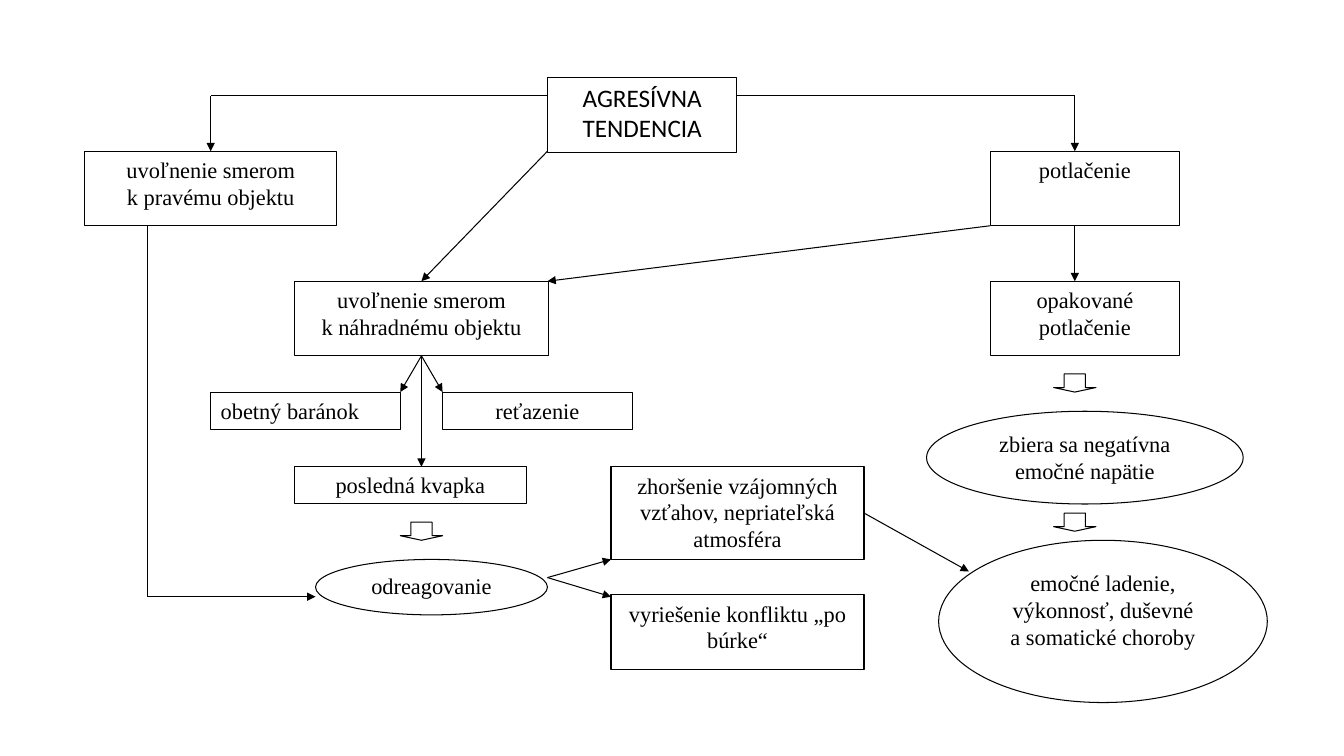
from dataclasses import dataclass
from typing import Optional

import pptx
import pptx.dml.color
import pptx.enum.shapes
import pptx.enum.text
import pptx.oxml
import pptx.oxml.ns
import pptx.util

Inches = pptx.util.Inches
Pt = pptx.util.Pt
Shape = pptx.enum.shapes.MSO_SHAPE
Align = pptx.enum.text.PP_ALIGN

BLACK = pptx.dml.color.RGBColor(0, 0, 0)
WHITE = pptx.dml.color.RGBColor(255, 255, 255)
LINE_WIDTH = Pt(0.75)
TOP, LEFT, BOTTOM, RIGHT = range(4)
HARD_SPACE = chr(160)  # keeps a one-letter word with the next word


@dataclass(frozen=True)
class Node:
    key: str
    text: str
    left: float
    top: float
    width: float
    height: float
    kind: int = Shape.RECTANGLE
    font: str = "Times New Roman"
    size: float = 16
    align: int = Align.CENTER


@dataclass(frozen=True)
class Link:
    """A line; begin and end may give a node's key and the side to join."""
    start: tuple[float, float]
    finish: tuple[float, float]
    arrow: bool = True
    begin: Optional[tuple[str, int]] = None
    end: Optional[tuple[str, int]] = None


NODES = [
    Node("tendency", "AGRESÍVNA TENDENCIA", 5.43, 0.77, 1.88, 0.74, font="Calibri", size=18),
    Node("suppression", "potlačenie", 9.82, 1.5, 1.88, 0.74),
    Node("repeated", "opakované potlačenie", 9.82, 2.79, 1.88, 0.74),
    Node("tension", "zbiera sa negatívna emočné napätie", 9.19, 4.08, 3.14, 0.92, Shape.OVAL),
    Node("real object", f"uvoľnenie smerom k{HARD_SPACE}pravému objektu", 0.84, 1.5, 2.5, 0.74),
    Node("substitute", f"uvoľnenie smerom k{HARD_SPACE}náhradnému objektu", 2.92, 2.79, 2.52, 0.74),
    Node("scapegoat", "obetný baránok", 2.09, 3.89, 1.88, 0.37, align=Align.LEFT),
    Node("chaining", "reťazenie", 4.39, 3.89, 1.88, 0.37),
    Node("last drop", "posledná kvapka", 2.92, 4.63, 2.3, 0.37),
    Node("release", "odreagovanie", 3.13, 5.55, 2.3, 0.55, Shape.OVAL),
    Node("worsening", "zhoršenie vzájomných vzťahov, nepriateľská atmosféra", 6.06, 4.63, 2.51, 0.92),
    Node("resolution", "vyriešenie konfliktu „po búrke“", 6.06, 5.9, 2.51, 0.74),
    Node("illness", f"emočné ladenie, výkonnosť, duševné a{HARD_SPACE}somatické choroby",
         9.31, 5.36, 3.26, 1.61, Shape.OVAL),
]

BLOCK_ARROWS = [(3.97, 5.18), (10.45, 3.71), (10.45, 5.09)]

SUBSTITUTE_BOTTOM = ("substitute", BOTTOM)
LINKS = [
    Link((7.31, 0.95), (10.66, 0.95), arrow=False),
    Link((10.66, 0.95), (10.66, 1.5)),
    Link((10.66, 2.24), (10.66, 2.79)),
    Link((5.43, 0.95), (2.09, 0.95), arrow=False),
    Link((2.09, 0.95), (2.09, 1.5), end=("real object", TOP)),
    Link((5.43, 1.5), (4.18, 2.79), end=("substitute", TOP)),
    Link((9.82, 2.24), (5.43, 2.79)),
    Link((4.18, 3.53), (4.18, 4.63), begin=SUBSTITUTE_BOTTOM),
    Link((4.18, 3.53), (3.97, 3.89), begin=SUBSTITUTE_BOTTOM),
    Link((4.18, 3.53), (4.39, 3.89), begin=SUBSTITUTE_BOTTOM),
    Link((1.46, 2.24), (1.46, 5.92), arrow=False),
    Link((1.46, 5.92), (3.13, 5.92)),
    Link((5.43, 5.73), (6.06, 5.55)),
    Link((5.43, 5.73), (6.06, 5.92)),
    Link((8.57, 5.12), (9.61, 5.67), begin=("worsening", RIGHT)),
]


def write_text(box, text: str, *, font: str, size: float, align: int) -> None:
    frame = box.text_frame
    frame.word_wrap = True
    frame.vertical_anchor = pptx.enum.text.MSO_ANCHOR.TOP
    para = frame.paragraphs[0]
    para.alignment = align
    span = para.add_run()
    span.text = text
    span.font.name = font
    span.font.size = Pt(size)
    span.font.color.rgb = BLACK


def draw_outlined(page, kind: int, left: float, top: float, width: float, height: float):
    """Draw a white shape with a thin black outline."""
    box = page.shapes.add_shape(kind, Inches(left), Inches(top), Inches(width), Inches(height))
    box.shadow.inherit = False
    box.fill.solid()
    box.fill.fore_color.rgb = WHITE
    box.line.color.rgb = BLACK
    box.line.width = LINE_WIDTH
    return box


def draw_node(page, node: Node):
    box = draw_outlined(page, node.kind, node.left, node.top, node.width, node.height)
    write_text(box, node.text, font=node.font, size=node.size, align=node.align)
    return box


def draw_block_arrow(page, left: float, top: float) -> None:
    arrow = draw_outlined(page, Shape.DOWN_ARROW, left, top, 0.42, 0.18)
    arrow.adjustments[0] = 0.5
    arrow.adjustments[1] = 0.25


def draw_link(page, link: Link, boxes: dict) -> None:
    points = [Inches(value) for value in link.start + link.finish]
    line = page.shapes.add_connector(pptx.enum.shapes.MSO_CONNECTOR.STRAIGHT, *points)
    if link.begin:
        key, side = link.begin
        line.begin_connect(boxes[key], side)
    if link.end:
        key, side = link.end
        line.end_connect(boxes[key], side)
    line.line.color.rgb = BLACK
    line.line.width = LINE_WIDTH
    namespace = pptx.oxml.ns.nsdecls("a")
    if link.arrow:
        outline = line.line._get_or_add_ln()
        outline.append(pptx.oxml.parse_xml(f'<a:tailEnd {namespace} type="triangle"/>'))
    line._element.spPr.append(pptx.oxml.parse_xml(f"<a:effectLst {namespace}/>"))


def main() -> None:
    deck = pptx.Presentation()
    deck.slide_width = Inches(13.33)
    deck.slide_height = Inches(7.5)
    page = deck.slides.add_slide(deck.slide_layouts[6])
    boxes = {node.key: draw_node(page, node) for node in NODES}
    for left, top in BLOCK_ARROWS:
        draw_block_arrow(page, left, top)
    for link in LINKS:
        draw_link(page, link, boxes)
    deck.save("out.pptx")


if __name__ == "__main__":
    main()
